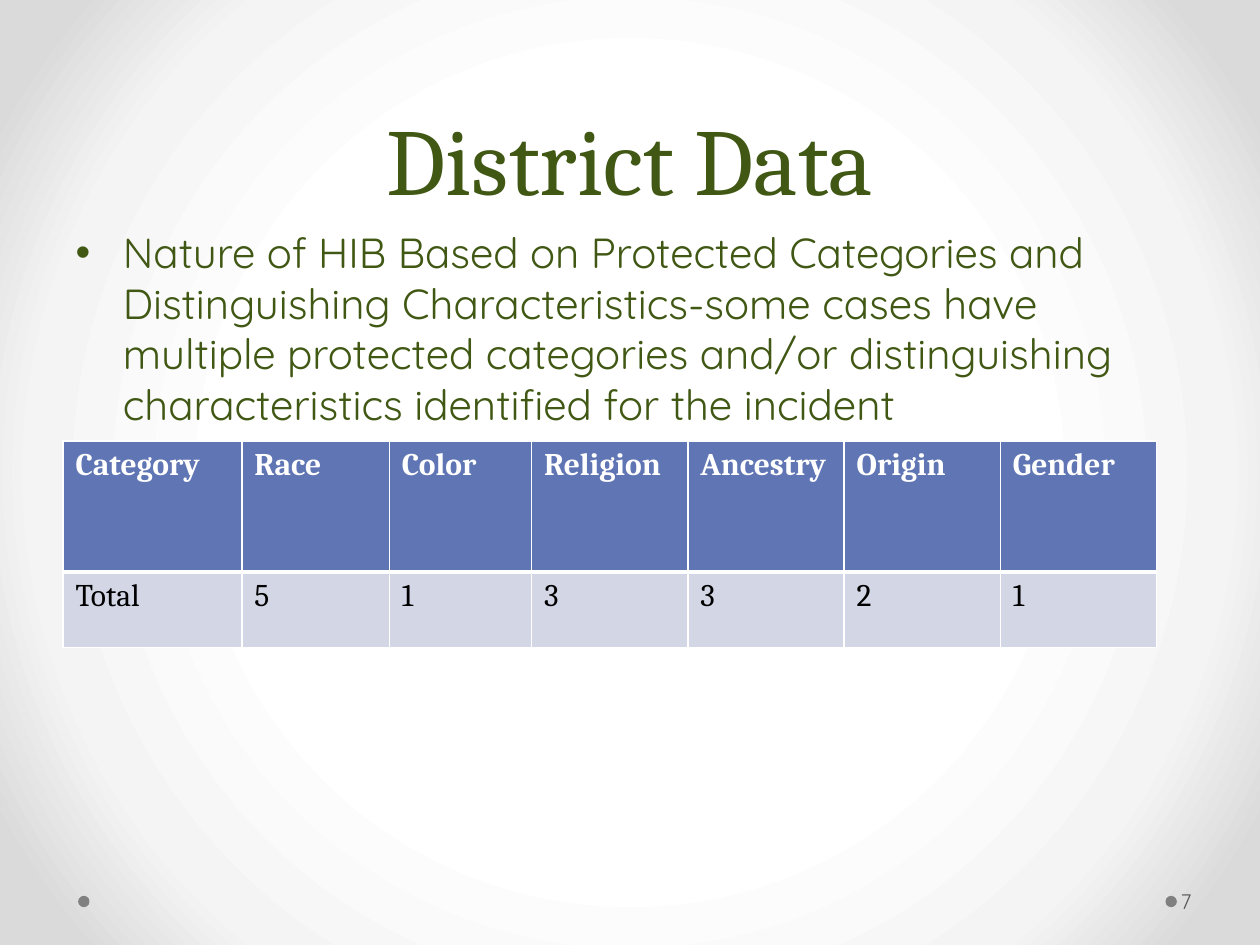
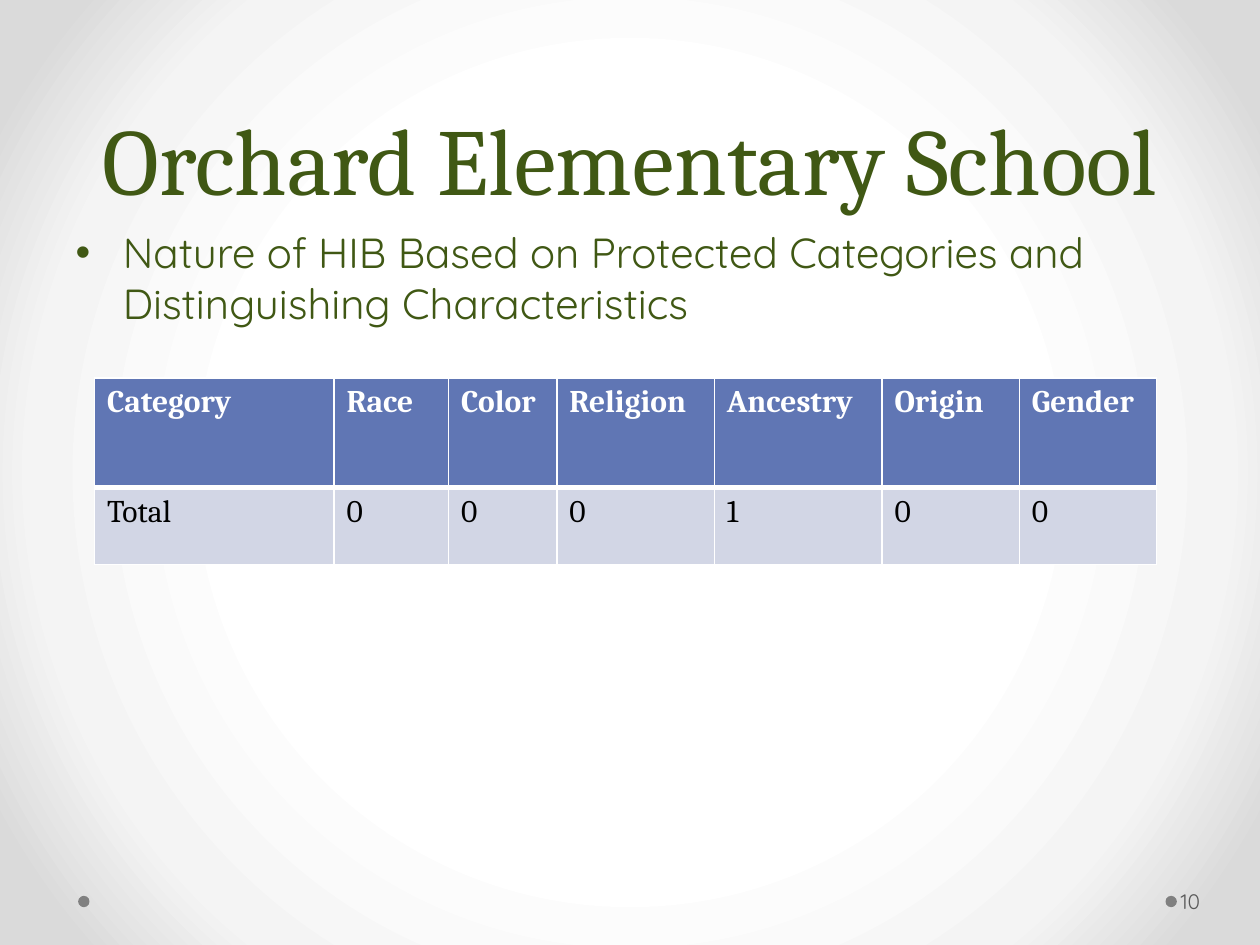
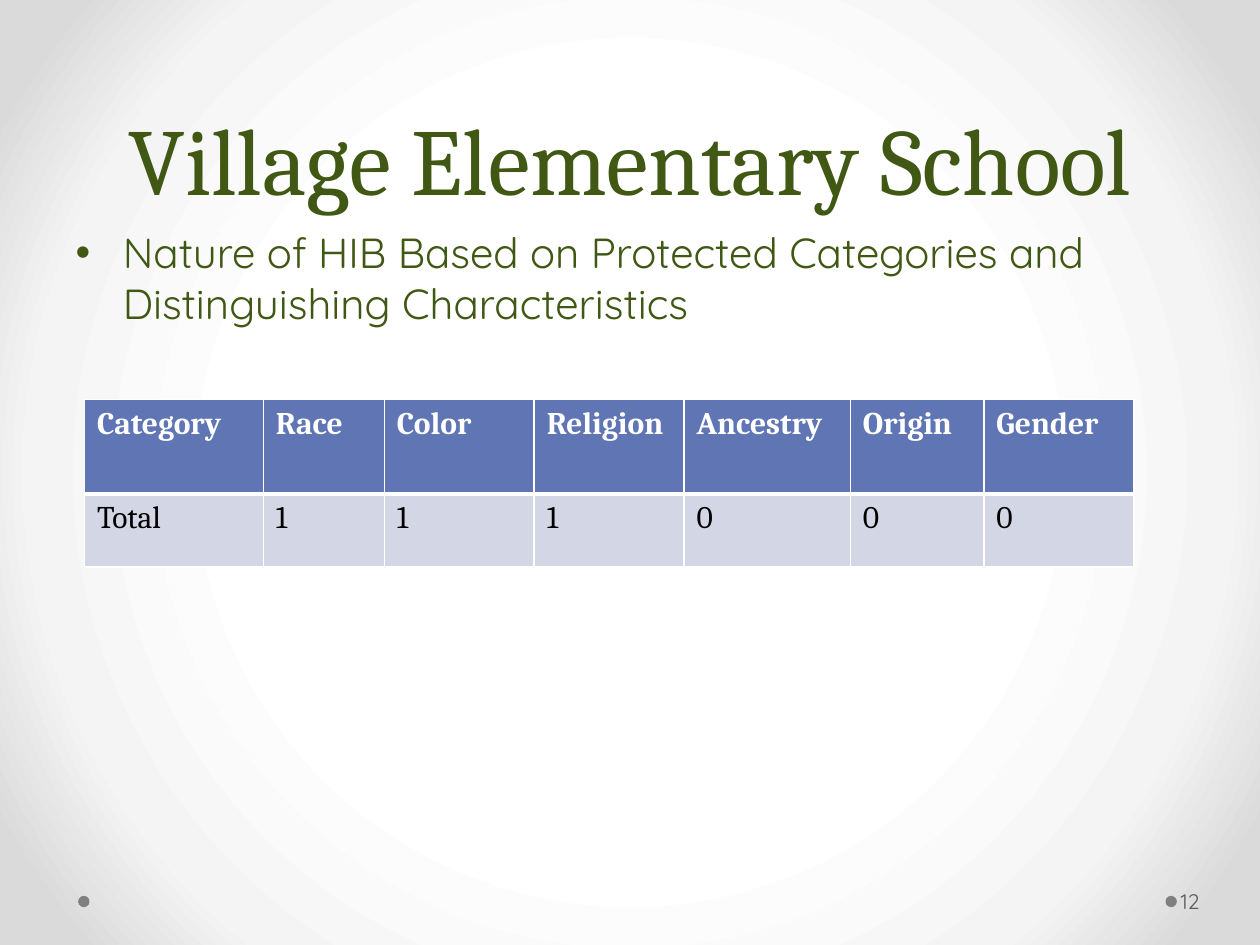
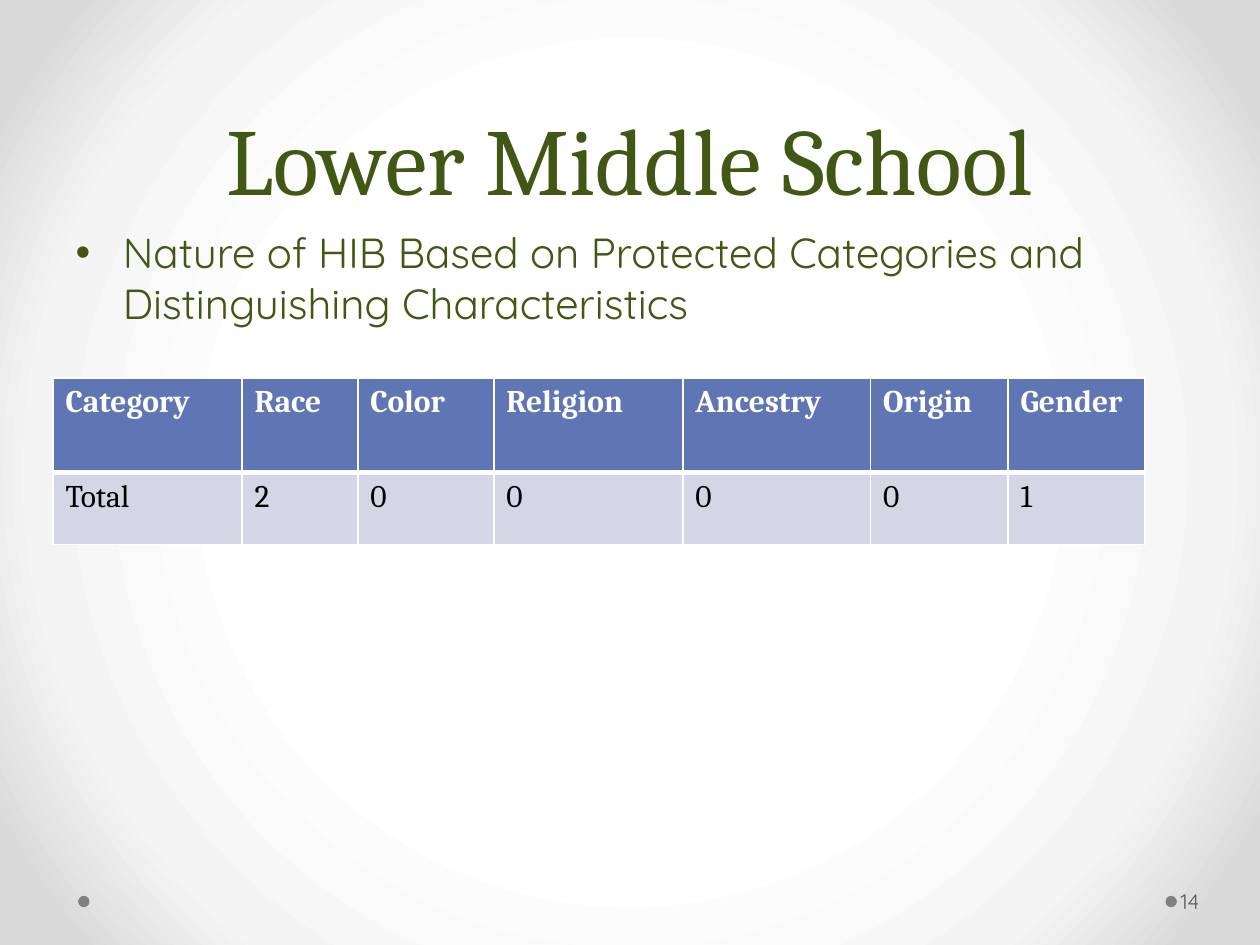
from lxml import etree
from pptx import Presentation
from pptx import util as u
from pptx.dml.color import RGBColor
from pptx.enum import shapes, text
from pptx.oxml import parse_xml
from pptx.oxml.ns import nsdecls, qn

PX = 9144  # 100 px to the inch
COLORS = {
    "green": "405814", "blue": "6076B4", "pale": "D2D6E5",
    "white": "FFFFFF", "black": "000000", "dot": "808080", "number": "595959",
}
GRADIENT = [(50, "FFFFFF"), (76, "F4F4F4"), (92, "DADADA")]
SERIF, SANS = "Cambria", "Quicksand"
HEADERS = ["Category", "Race", "Color", "Religion", "Ancestry", "Origin", "Gender"]
NATURE = ("Nature of HIB Based on Protected Categories and "
          "Distinguishing Characteristics")
MULTIPLE = ("-some cases have multiple protected categories and/or "
            "distinguishing characteristics identified for the incident")

# title, page, body, table left and top, column widths, row heights, totals
SLIDES = [
    ("District Data", 7, NATURE + MULTIPLE, (50, 350),
     [142, 117, 113, 124, 124, 124, 124], [104, 60], [5, 1, 3, 3, 2, 1]),
    ("Orchard Elementary School", 10, NATURE, (75, 300),
     [190, 91, 86, 125, 133, 109, 109], [87, 61], [0, 0, 0, 1, 0, 0]),
    ("Village Elementary School", 12, NATURE, (67, 317),
     [142, 96, 119, 119, 132, 106, 119], [75, 58], [1, 1, 1, 0, 0, 0]),
    ("Lower Middle School", 14, NATURE, (42, 300),
     [150, 92, 108, 150, 149, 109, 109], [75, 57], [2, 0, 0, 0, 0, 1]),
]


def rgb(name):
    return RGBColor.from_string(COLORS[name])


def px(*lengths):
    return [u.Emu(n * PX) for n in lengths]


class Deck:
    def __init__(self):
        self.prs = Presentation()
        self.prs.slide_width, self.prs.slide_height = px(1000, 750)
        self.slide = None

    def new_slide(self):
        self.slide = self.prs.slides.add_slide(self.prs.slide_layouts[1])

    # Shared look on the master
    def background(self):
        master = self.prs.slide_master
        master.background.fill.solid()
        bg = master.element.find(".//" + qn("p:bgPr"))
        stops = "".join(f'<a:gs pos="{pos * 1000}"><a:srgbClr val="{color}"/></a:gs>'
                        for pos, color in GRADIENT)
        bg.replace(bg[0], parse_xml(
            f'<a:gradFill {nsdecls("a")} rotWithShape="1"><a:gsLst>{stops}</a:gsLst>'
            '<a:path path="circle"><a:fillToRect l="50000" t="50000" r="50000" b="50000"/>'
            '</a:path></a:gradFill>'))

    def master_dot(self, left, shape_id):
        sp = self.slide.shapes.add_shape(shapes.MSO_SHAPE.OVAL, *px(left, 711, 9, 9))
        sp.shadow.inherit = False
        sp.fill.solid()
        sp.fill.fore_color.rgb = rgb("dot")
        sp.line.fill.background()
        sp.element.find(".//" + qn("p:cNvPr")).set("id", str(shape_id))
        self.prs.slide_master.element.find(".//" + qn("p:spTree")).insert(2, sp.element)

    # Text
    def set_text(self, tf, words, size, font, color, bold=False):
        tf.text = words
        p = tf.paragraphs[0]
        r = p.runs[0]
        r.font.size = u.Pt(size)
        r.font.name = font
        r.font.bold = bold
        r.font.color.rgb = rgb(color)
        return p

    def place(self, sp, left, top, width, height):
        sp.left, sp.top, sp.width, sp.height = px(left, top, width, height)
        sp.text_frame.auto_size = text.MSO_AUTO_SIZE.NONE
        return sp.text_frame

    def title(self, words):
        tf = self.place(self.slide.shapes.title, 50, 0, 900, 175)
        tf.vertical_anchor = text.MSO_ANCHOR.BOTTOM
        p = self.set_text(tf, words, 54, SERIF, "green")
        p.alignment = text.PP_ALIGN.CENTER
        p.line_spacing = u.Pt(58)

    def body(self, words):
        # The template's body style supplies the bullet, indent and spacing
        tf = self.place(self.slide.placeholders[1], 50, 175, 900, 495)
        self.set_text(tf, words, 24, SANS, "green")

    def page_number(self, number):
        tf = self.slide.shapes.add_textbox(*px(934, 695, 61, 40)).text_frame
        tf.word_wrap = True
        tf.vertical_anchor = text.MSO_ANCHOR.MIDDLE
        tf.margin_left, tf.margin_right = px(3, 5)
        self.set_text(tf, str(number), 12, SANS, "number")

    # Table
    def borders(self, cell, top, bottom):
        tc_pr = cell._tc.get_or_add_tcPr()
        for side, width in zip("LRTB", (1, 1, top, bottom)):
            ln = etree.SubElement(tc_pr, qn(f"a:ln{side}"), w=str(u.Pt(width)))
            fill = etree.SubElement(ln, qn("a:solidFill"))
            etree.SubElement(fill, qn("a:srgbClr"), val=COLORS["white"])

    def table(self, corner, widths, heights, rows):
        frame = self.slide.shapes.add_table(
            len(rows), len(widths), *px(*corner, sum(widths), sum(heights)))
        table = frame.table
        for column, width in zip(table.columns, px(*widths)):
            column.width = width
        for row, height in zip(table.rows, px(*heights)):
            row.height = height
        for i, values in enumerate(rows):
            head = i == 0
            for j, value in enumerate(values):
                cell = table.cell(i, j)
                self.borders(cell, 1 if head else 3, 3 if head else 1)
                cell.fill.solid()
                cell.fill.fore_color.rgb = rgb("blue" if head else "pale")
                self.set_text(cell.text_frame, str(value), 18, SERIF,
                              "white" if head else "black", head)


def main():
    deck = Deck()
    deck.background()
    for i, (title, page, body, corner, widths, heights, totals) in enumerate(SLIDES):
        deck.new_slide()
        if i == 0:
            deck.master_dot(62, 101)
            deck.master_dot(925, 102)
        deck.title(title)
        deck.body(body)
        deck.page_number(page)
        deck.table(corner, widths, heights, [HEADERS, ["Total", *totals]])
    deck.prs.save("out.pptx")


if __name__ == "__main__":
    main()
